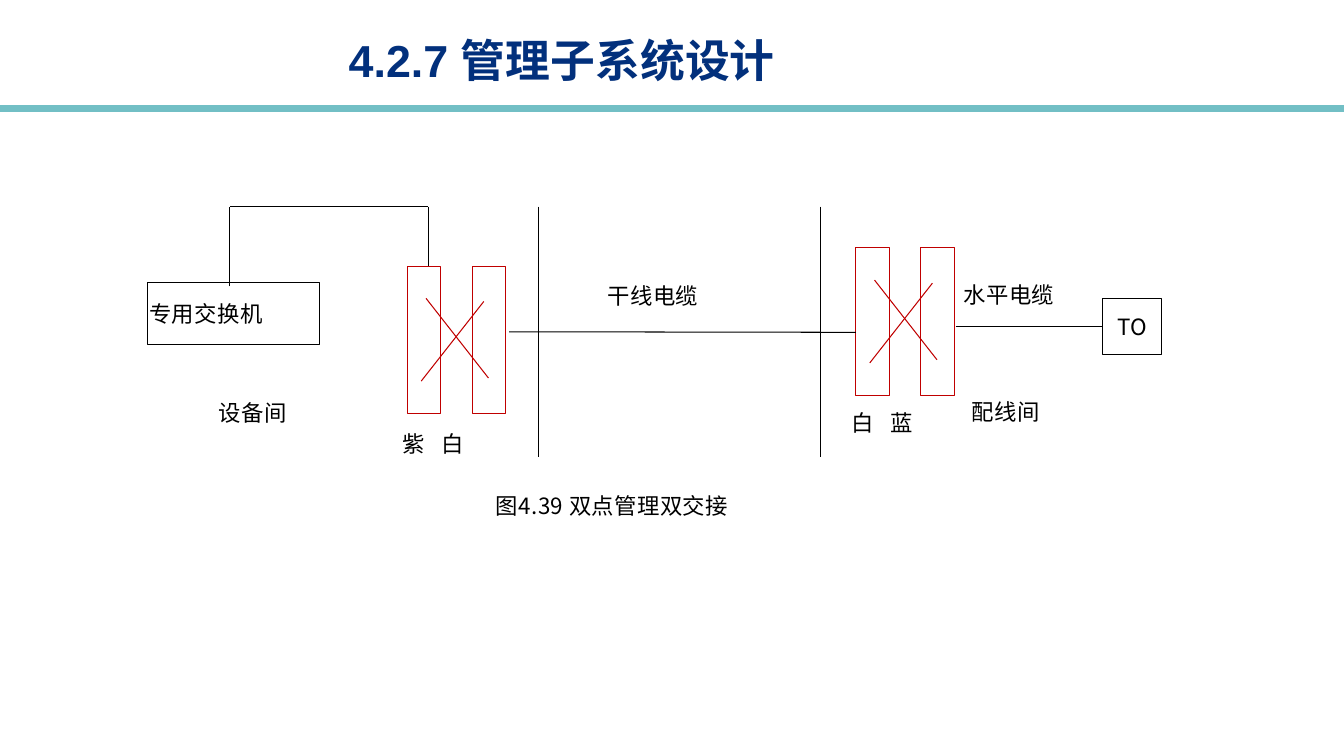
from lxml.etree import SubElement
from pptx import Presentation
from pptx.dml.color import RGBColor
from pptx.enum.shapes import MSO_CONNECTOR as LINE, MSO_SHAPE as SHAPE
from pptx.enum.text import MSO_ANCHOR as ANCHOR, PP_ALIGN as ALIGN
from pptx.oxml.ns import qn
from pptx.util import Pt

BLACK = RGBColor(0, 0, 0)
WHITE = RGBColor(255, 255, 255)
RED = RGBColor(0xC0, 0, 0)
TEAL = RGBColor(0x72, 0xBF, 0xC5)
NAVY = RGBColor(0x02, 0x30, 0x7C)
BODY_FONT = "Noto Sans CJK SC"

deck = Presentation()
deck.slide_width, deck.slide_height = Pt(960), Pt(540)
page = deck.slides.add_slide(deck.slide_layouts[6])


def add_line(x1, y1, x2, y2, color=BLACK, weight=0.75):
    line = page.shapes.add_connector(LINE.STRAIGHT, Pt(x1), Pt(y1), Pt(x2), Pt(y2))
    line.line.color.rgb = color
    line.line.width = Pt(weight)
    SubElement(line._element.spPr, qn("a:effectLst"))
    return line


def add_box(left, top, width, height, text="", border=None, fill=WHITE, align=ALIGN.JUSTIFY):
    box = page.shapes.add_shape(SHAPE.RECTANGLE, Pt(left), Pt(top), Pt(width), Pt(height))
    box.shadow.inherit = False
    if fill is None:
        box.fill.background()
    else:
        box.fill.solid()
        box.fill.fore_color.rgb = fill
    if border is None:
        box.line.fill.background()
    else:
        box.line.color.rgb = border
        box.line.width = Pt(0.75)
    if text:
        frame = box.text_frame
        frame.word_wrap = True
        frame.vertical_anchor = ANCHOR.MIDDLE
        frame.margin_left = frame.margin_right = Pt(1.4)
        frame.margin_top = frame.margin_bottom = Pt(0.7)
        para = frame.paragraphs[0]
        para.alignment = align
        span = para.add_run()
        span.text = text
        span.font.size = Pt(16)
        span.font.name = BODY_FONT
        span.font.color.rgb = BLACK
        props = span._r.get_or_add_rPr()
        props.set("spc", "30")
        SubElement(props, qn("a:ea"), typeface=BODY_FONT)
    return box


add_line(0, 77.3, 960, 77.3, TEAL, 5)

title = page.shapes.add_textbox(Pt(242), Pt(20.2), Pt(345), Pt(45.4))
title.text_frame.word_wrap = True
title.text_frame.vertical_anchor = ANCHOR.MIDDLE
span = title.text_frame.paragraphs[0].add_run()
span.text = "4.2.7 管理子系统设计"
span.font.size = Pt(32)
span.font.bold = True
span.font.name = "Arial"
span.font.color.rgb = NAVY

for left, top, width, text in [
    (607, 279.4, 80, "白\t蓝"),
    (286, 294.5, 80, "紫\t白"),
    (687, 188, 94.3, "水平电缆"),
    (432.7, 188.6, 94.3, "干线电缆"),
    (154.8, 272.2, 94.3, "设备间"),
    (692.6, 272, 82.8, "配线间"),
    (352.8, 339.1, 272.2, "图4.39 双点管理双交接"),
]:
    label = add_box(left, top, width, 44.6, text)
    if "\t" in text:
        label.text_frame.paragraphs[0].alignment = ALIGN.LEFT
        para_props = label.text_frame.paragraphs[0]._p.get_or_add_pPr()
        tabs = SubElement(para_props, qn("a:tabLst"))
        SubElement(tabs, qn("a:tab"), pos=str(Pt(28)), algn="l")

add_box(105.1, 201.6, 123.1, 44.6, "专用交换机", BLACK)

for left, top in [(290.9, 190.1), (611.3, 177.1)]:
    for offset in (0, 46.5):
        add_box(left + offset, top, 23.8, 105.1, border=RED)
    add_line(left + 54.7, top + 25.2, left + 10, top + 82.1, RED)
    add_line(left + 13.4, top + 23, left + 58, top + 79.9, RED)

add_line(164.2, 204.5, 164.2, 147.6)
add_line(164.2, 147.6, 306, 147.6)
add_line(306, 147.6, 306, 190.1)
for divider in (384.5, 586.1):
    add_line(divider, 147.6, divider, 326.2)
add_line(363.6, 237, 611.3, 237.4)

outlet = add_box(787.7, 213.1, 41.8, 40.3, "TO", BLACK, None, ALIGN.CENTER)
horizontal_cable = add_line(682.6, 233.25, 787.7, 233.25)
horizontal_cable.end_connect(outlet, 1)

deck.save("out.pptx")
